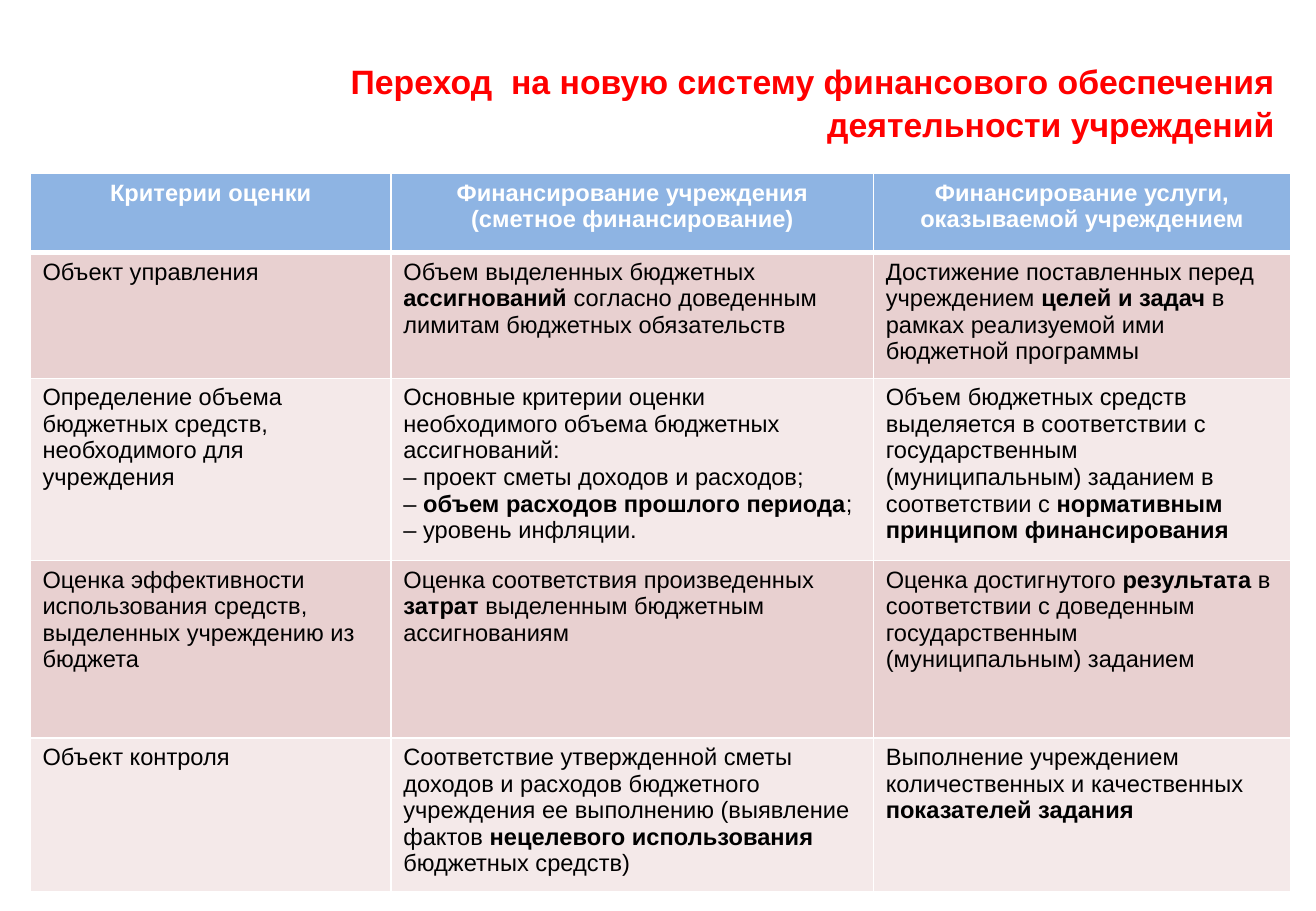
"""Build the slide that compares two ways of financing institutions."""
from dataclasses import dataclass

from lxml.etree import SubElement
from pptx import Presentation
from pptx.dml.color import RGBColor
from pptx.enum.text import MSO_ANCHOR as Anchor, PP_ALIGN as Align
from pptx.oxml.ns import qn
from pptx.slide import Slide
from pptx.table import _Cell as Cell
from pptx.text.text import TextFrame
from pptx.util import Inches, Length, Pt


@dataclass(frozen=True)
class Theme:
    """Colours and type sizes of the slide."""
    font: str = "Arial"
    title_size: int = 20
    table_size: int = 14
    title: str = "FF0000"
    header: str = "8EB4E3"
    header_text: str = "FFFFFF"
    body_text: str = "000000"
    bands: tuple[str, str] = ("E8D0D0", "F4E9E9")
    border: str = "FFFFFF"
    thin: int = 1
    thick: int = 3


@dataclass(frozen=True)
class TextStyle:
    """Look of the paragraphs in one text frame."""
    size: int
    color: str
    bold: bool = False
    align: Align = Align.LEFT
    spacing: float = 1.0


@dataclass(frozen=True)
class Criterion:
    """One table row, with bold words between asterisks."""
    height: float
    name: str
    institution: str
    service: str


THEME = Theme()
WIDTH, HEIGHT = Inches(10.83), Inches(7.5)
COLUMN_SHARES = (27.42, 36.66, 31.67)
TITLE = "Переход  на новую систему финансового обеспечения деятельности учреждений"
TITLE_STYLE = TextStyle(THEME.title_size, THEME.title, True, Align.RIGHT, 1.05)
HEADER_STYLE = TextStyle(THEME.table_size, THEME.header_text, True, Align.CENTER)
BODY_STYLE = TextStyle(THEME.table_size, THEME.body_text)

CRITERIA = (
    Criterion(
        8.67,
        "Критерии оценки",
        "Финансирование учреждения (сметное финансирование)",
        "Финансирование услуги, оказываемой учреждением",
    ),
    Criterion(
        13.2,
        "Объект управления",
        "Объем выделенных бюджетных *ассигнований* согласно доведенным лимитам "
        "бюджетных обязательств",
        "Достижение поставленных перед учреждением *целей и задач *в рамках "
        "реализуемой ими бюджетной программы",
    ),
    Criterion(
        19.07,
        "Определение объема бюджетных средств, необходимого для учреждения",
        "Основные критерии оценки необходимого объема бюджетных ассигнований:\n"
        "– проект сметы доходов и расходов;\n"
        "– *объем расходов прошлого периода*;\n"
        "– уровень инфляции.",
        "Объем бюджетных средств выделяется в соответствии с государственным "
        "(муниципальным) заданием в соответствии с "
        "*нормативным принципом финансирования*",
    ),
    Criterion(
        19.47,
        "Оценка эффективности использования средств, выделенных учреждению из бюджета",
        "Оценка соответствия произведенных *затрат* выделенным бюджетным ассигнованиям",
        "Оценка достигнутого *результата* в соответствии с доведенным "
        "государственным (муниципальным) заданием",
    ),
    Criterion(
        16.27,
        "Объект контроля",
        "Соответствие утвержденной сметы доходов и расходов бюджетного учреждения "
        "ее выполнению (выявление фактов *нецелевого использования *бюджетных средств)",
        "Выполнение учреждением количественных и качественных *показателей задания*",
    ),
)


def across(share: float) -> Length:
    """Turn a percentage of the slide width into a length."""
    return Length(round(WIDTH * share / 100))


def down(share: float) -> Length:
    """Turn a percentage of the slide height into a length."""
    return Length(round(HEIGHT * share / 100))


def write_text(frame: TextFrame, text: str, style: TextStyle) -> None:
    """Fill a frame with one paragraph per line of text."""
    for index, line in enumerate(text.split("\n")):
        paragraph = frame.paragraphs[0] if index == 0 else frame.add_paragraph()
        paragraph.alignment = style.align
        paragraph.line_spacing = style.spacing
        paragraph.font.name = THEME.font
        paragraph.font.size = Pt(style.size)
        paragraph.font.bold = style.bold
        paragraph.font.color.rgb = RGBColor.from_string(style.color)
        for part, words in enumerate(line.split("*")):
            if words:
                run = paragraph.add_run()
                run.text = words
                if part % 2:
                    run.font.bold = True


def add_borders(cell: Cell, top: int, bottom: int) -> None:
    """Draw the four borders of a cell."""
    properties = cell._tc.get_or_add_tcPr()
    widths = {"lnL": THEME.thin, "lnR": THEME.thin, "lnT": top, "lnB": bottom}
    for side, width in widths.items():
        line = SubElement(properties, qn(f"a:{side}"), w=str(Pt(width)))
        fill = SubElement(line, qn("a:solidFill"))
        SubElement(fill, qn("a:srgbClr"), val=THEME.border)


def add_title(slide: Slide) -> None:
    """Place the heading above the table."""
    shape = slide.shapes.add_textbox(across(20.13), down(4.67), across(77.65), down(12.93))
    shape.text_frame.word_wrap = True
    shape.text_frame.vertical_anchor = Anchor.MIDDLE
    write_text(shape.text_frame, TITLE, TITLE_STYLE)


def add_criteria_table(slide: Slide) -> None:
    """Place the table with its header and banded rows."""
    total_height = sum(criterion.height for criterion in CRITERIA)
    table = slide.shapes.add_table(
        len(CRITERIA), len(COLUMN_SHARES),
        across(2.31), down(19.07), across(sum(COLUMN_SHARES)), down(total_height),
    ).table
    table.horz_banding = False
    for column, share in zip(table.columns, COLUMN_SHARES):
        column.width = across(share)
    for index, (row, criterion) in enumerate(zip(table.rows, CRITERIA)):
        row.height = down(criterion.height)
        is_header = index == 0
        style = HEADER_STYLE if is_header else BODY_STYLE
        color = THEME.header if is_header else THEME.bands[(index - 1) % 2]
        top = THEME.thick if index == 1 else THEME.thin
        bottom = THEME.thick if is_header else THEME.thin
        texts = (criterion.name, criterion.institution, criterion.service)
        for cell, text in zip(row.cells, texts):
            add_borders(cell, top, bottom)
            cell.fill.solid()
            cell.fill.fore_color.rgb = RGBColor.from_string(color)
            write_text(cell.text_frame, text, style)


def main() -> None:
    """Create the presentation and save it."""
    presentation = Presentation()
    presentation.slide_width, presentation.slide_height = WIDTH, HEIGHT
    slide = presentation.slides.add_slide(presentation.slide_layouts[6])
    add_title(slide)
    add_criteria_table(slide)
    presentation.save("out.pptx")


if __name__ == "__main__":
    main()
